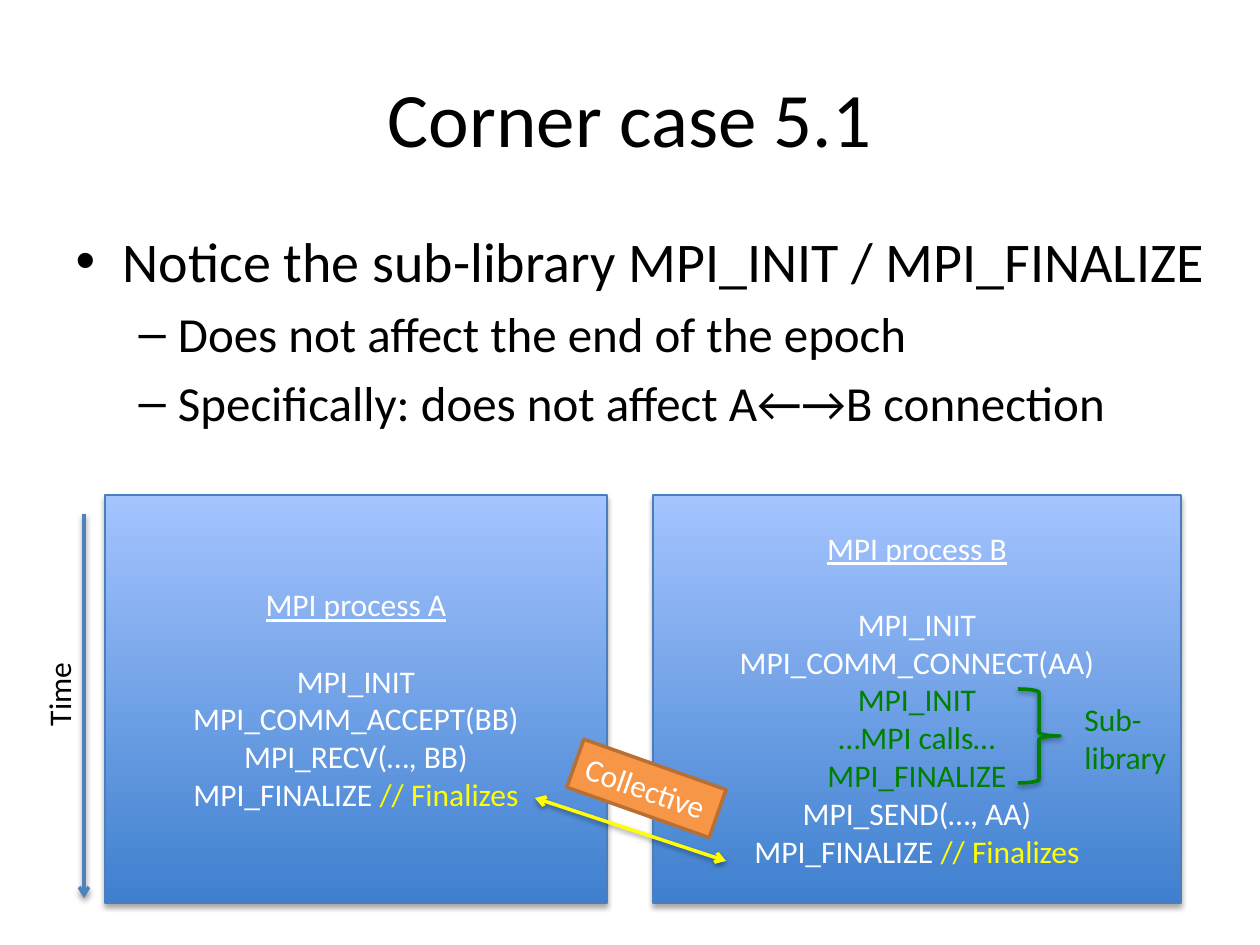
from lxml import etree
from pptx import Presentation
from pptx import util as u
from pptx.dml.color import RGBColor
from pptx.enum import shapes, text
from pptx.oxml.ns import qn

PX = u.Inches(1) / 126
WHITE, BLACK, GREEN, YELLOW = "FFFFFF", "000000", "008000", "FFFF00"

# Content
TITLE = "Corner case 5.1"
BULLETS = [  # level, size, text
    (0, 32, "Notice the sub-library MPI_INIT / MPI_FINALIZE"),
    (1, 28, "Does not affect the end of the epoch"),
    (1, 28, "Specifically: does not affect A←→B connection"),
]
FINALIZES = [("MPI_FINALIZE ", WHITE), ("// Finalizes", YELLOW)]
PROCESSES = [  # left, width, heading, lines of (text, colour) runs
    (105, 502, "MPI process A", [
        [("MPI_INIT", WHITE)],
        [("MPI_COMM_ACCEPT(BB)", WHITE)],
        [("MPI_RECV(…, BB)", WHITE)],
        FINALIZES,
    ]),
    (653, 528, "MPI process B", [
        [("MPI_INIT", WHITE)],
        [("MPI_COMM_CONNECT(AA)", WHITE)],
        [("MPI_INIT", GREEN)],
        [("…MPI calls…", GREEN)],
        [("MPI_FINALIZE", GREEN)],
        [("MPI_SEND(…, AA)", WHITE)],
        FINALIZES,
    ]),
]
LABELS = [  # box, lines, colour, rotation, fill, line
    ((1072, 694, 108, 89), ["Sub-", "library"], GREEN, 0, None, None),
    ((14, 668, 90, 51), ["Time"], BLACK, 270, None, None),
    ((571, 763, 151, 51), ["Collective"], WHITE, 19.5, "F79646", "B76F34"),
]
ARROWS = [  # ends, colour, arrowheads
    ((84, 514, 84, 898), "4F81BD", ["tailEnd"]),
    ((535, 798, 726, 861), YELLOW, ["headEnd", "tailEnd"]),
]


def emu(*values):
    return [u.Emu(round(v * PX)) for v in values]


def rgb(value):
    return RGBColor.from_string(value)


def place(sp, box):
    for name, value in zip(("left", "top", "width", "height"), emu(*box)):
        setattr(sp, name, value)


def add_run(p, words, color, size=18, **extra):
    r = p.add_run()
    r.text = words
    for name, value in dict(name="Calibri", size=u.Pt(size), **extra).items():
        setattr(r.font, name, value)
    r.font.color.rgb = rgb(color)


def paragraphs(tf, count):
    return [tf.paragraphs[0]] + [tf.add_paragraph() for _ in range(count - 1)]


def set_line(sp, color, width=2):
    sp.line.color.rgb = rgb(color)
    sp.line.width = u.Pt(width)


def set_shadow(sp, alpha, dist):
    effects = etree.SubElement(sp._element.spPr, qn("a:effectLst"))
    shadow = etree.SubElement(effects, qn("a:outerShdw"), dir="5400000", rotWithShape="0",
                              blurRad=str(u.Pt(3.1)), dist=str(u.Pt(dist)))
    color = etree.SubElement(shadow, qn("a:srgbClr"), val=BLACK)
    etree.SubElement(color, qn("a:alpha"), val=str(alpha * 1000))


prs = Presentation()
prs.slide_width, prs.slide_height = emu(1260, 945)
slide = prs.slides.add_slide(prs.slide_layouts[1])

# Title and bullets
title, body = slide.placeholders
place(title, (63, 38, 1134, 157))
add_run(title.text_frame.paragraphs[0], TITLE, BLACK, 44)
place(body, (63, 220, 1197, 624))
body.text_frame.auto_size = text.MSO_AUTO_SIZE.NONE
for p, (level, size, words) in zip(paragraphs(body.text_frame, len(BULLETS)), BULLETS):
    p.level = level
    add_run(p, words, BLACK, size)

# Process boxes
for left, width, heading, lines in PROCESSES:
    sp = slide.shapes.add_shape(shapes.MSO_SHAPE.RECTANGLE, *emu(left, 495, width, 408))
    sp.fill.gradient()
    sp.fill.gradient_angle = 90
    for stop, color in zip(sp.fill.gradient_stops, ("3F80CE", "A4C4FF")):
        stop.color.rgb = rgb(color)
    for stop, position in zip(sp.fill.gradient_stops, (0, 1)):
        stop.position = position
    set_line(sp, "4B7EBC", 0.75)
    set_shadow(sp, 35, 1.8)
    tf = sp.text_frame
    tf.word_wrap = True
    tf.vertical_anchor = text.MSO_ANCHOR.MIDDLE
    head, *rest = paragraphs(tf, len(lines) + 1)
    add_run(head, heading, WHITE, underline=True)
    head.space_after = u.Pt(22)
    for p, runs in zip(rest, lines):
        for words, color in runs:
            add_run(p, words, color)
    for p in tf.paragraphs:
        p.alignment = text.PP_ALIGN.CENTER

# Brace around the sub-library calls
brace = slide.shapes.add_shape(shapes.MSO_SHAPE.RIGHT_BRACE, *emu(1018, 689, 42, 94))
brace.fill.background()
set_line(brace, GREEN)
set_shadow(brace, 38, 1.6)

# Time axis and collective arrow
for ends, color, heads in ARROWS:
    line = slide.shapes.add_connector(shapes.MSO_CONNECTOR.STRAIGHT, *emu(*ends))
    set_line(line, color)
    for head in heads:
        etree.SubElement(line.line._get_or_add_ln(), qn(f"a:{head}"), type="arrow")
    set_shadow(line, 38, 1.6)

# Labels
for box, lines, color, rotation, fill, outline in LABELS:
    sp = slide.shapes.add_textbox(*emu(*box))
    sp.rotation = rotation
    if fill:
        sp.fill.solid()
        sp.fill.fore_color.rgb = rgb(fill)
        set_line(sp, outline)
    sp.text_frame.word_wrap = False
    sp.text_frame.auto_size = text.MSO_AUTO_SIZE.SHAPE_TO_FIT_TEXT
    for p, words in zip(paragraphs(sp.text_frame, len(lines)), lines):
        add_run(p, words, color)

prs.save("out.pptx")
